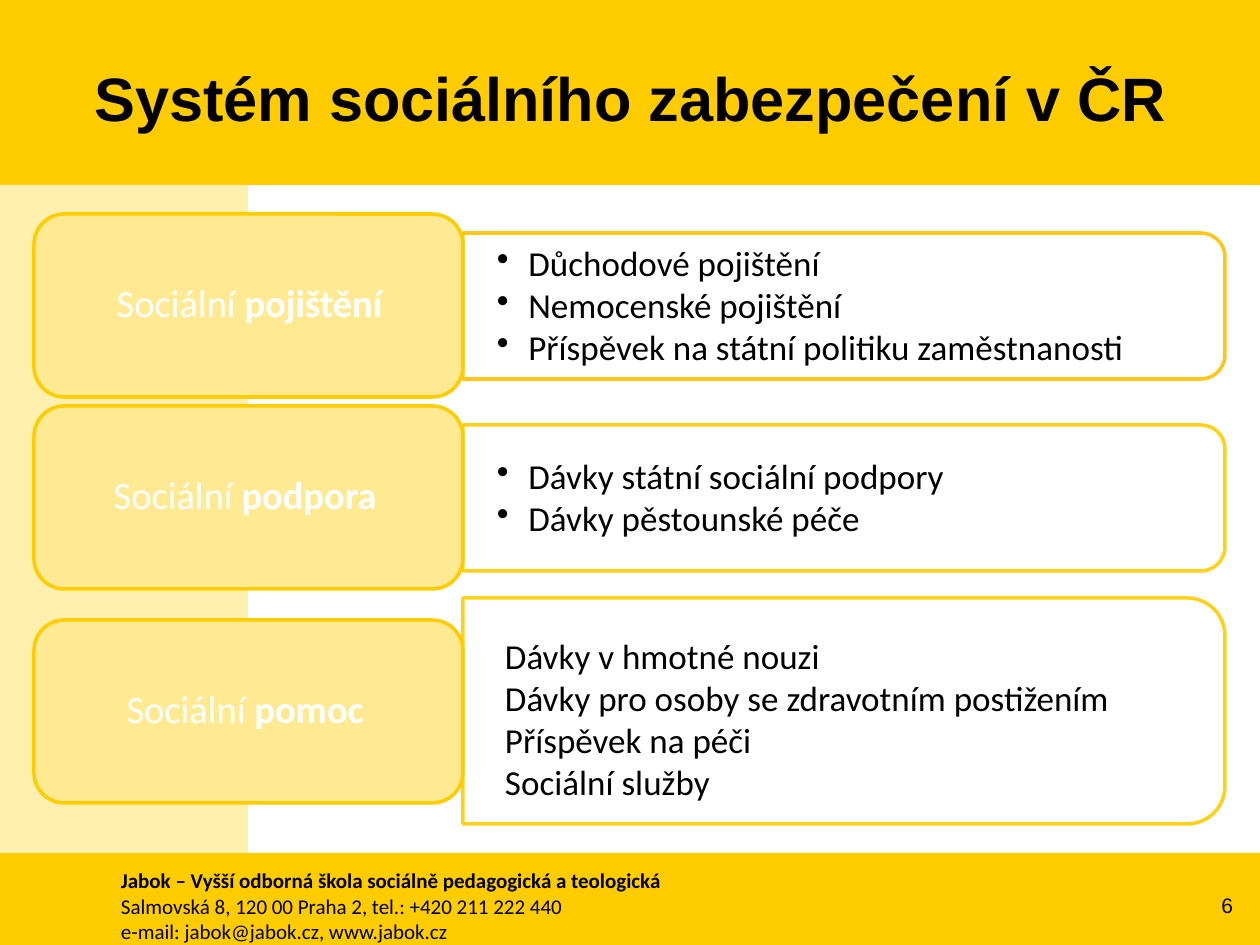
from lxml import etree
from pptx import Presentation
from pptx import util as u
from pptx.dml.color import RGBColor
from pptx.enum import shapes, text
from pptx.oxml.ns import qn

SCALE = 914400 / 126  # EMU per px
GOLD = RGBColor(0xFF, 0xCC, 0x00)
AMBER = RGBColor(0xFF, 0xC0, 0x00)
CREAM = RGBColor(0xFF, 0xF0, 0xAF)
LEMON = RGBColor(0xFF, 0xEA, 0x93)
WHITE = RGBColor(0xFF, 0xFF, 0xFF)
BLACK = RGBColor(0x00, 0x00, 0x00)
KIND = shapes.MSO_SHAPE
ALIGN = text.PP_ALIGN

deck = Presentation()
deck.slide_width, deck.slide_height = u.Inches(10), u.Inches(7.5)
page = deck.slides.add_slide(deck.slide_layouts[6])


def add_block(kind, place, fill, line=None):
    block = page.shapes.add_shape(kind, *(round(v * SCALE) for v in place))
    block.shadow.inherit = False
    block.fill.solid()
    block.fill.fore_color.rgb = fill
    if line is None:
        block.line.fill.background()
    else:
        block.line.color.rgb = line
        block.line.width = u.Pt(2)
    return block


def add_text(place, lines, size, name="Calibri", color=BLACK, insets=(13, 6, 13, 6),
             anchor=text.MSO_ANCHOR.MIDDLE, bullet=False, **paragraph):
    """Each line is a list of (wording, bold) spans."""
    box = page.shapes.add_textbox(*(round(v * SCALE) for v in place))
    frame = box.text_frame
    frame.word_wrap = True
    frame.vertical_anchor = anchor
    for side, inset in zip(("left", "top", "right", "bottom"), insets):
        setattr(frame, "margin_" + side, round(inset * SCALE))
    for number, line in enumerate(lines):
        para = frame.add_paragraph() if number else frame.paragraphs[0]
        for key, value in paragraph.items():
            setattr(para, key, value)
        if bullet:
            props = para._p.get_or_add_pPr()
            props.set("marL", str(u.Inches(0.25)))
            props.set("indent", str(-u.Inches(0.25)))
            etree.SubElement(props, qn("a:buChar")).set("char", "•")
        for wording, bold in line:
            span = para.add_run()
            span.text = wording
            form = {"size": u.Pt(size), "name": name, "bold": bold}
            for key, value in form.items():
                setattr(span.font, key, value)
            span.font.color.rgb = color


# Background bands
add_block(KIND.RECTANGLE, (0, 0, 1260, 185), GOLD)
add_block(KIND.RECTANGLE, (0, 185, 248, 760), CREAM)
add_block(KIND.RECTANGLE, (0, 853, 1260, 96), GOLD)

# Footer and page number
add_text((108, 862, 1032, 89),
         [[("Jabok – Vyšší odborná škola sociálně pedagogická a teologická", True)],
          [("Salmovská 8, 120 00 Praha 2, tel.: +420 211 222 440", False)],
          [("e-mail: jabok@jabok.cz, www.jabok.cz", False)]],
         12, anchor=text.MSO_ANCHOR.TOP)
add_text((1167, 880, 79, 50), [[("6", False)]], 12, "Arial", alignment=ALIGN.RIGHT)

# Title
add_text((64, 18, 1134, 158), [[("Systém sociálního zabezpečení v ČR", True)]],
         35, "Arial", alignment=ALIGN.CENTER)

# Rows: label top, bold word, panel top and height, outline, bulleted, items
rows = [
    (214, "pojištění", 233, 146, AMBER, True,
     ["Důchodové pojištění", "Nemocenské pojištění",
      "Příspěvek na státní politiku zaměstnanosti"]),
    (406, "podpora ", 425, 146, GOLD, True,
     ["Dávky státní sociální podpory", "Dávky pěstounské péče"]),
    (620, "pomoc ", 598, 226, GOLD, False,
     ["Dávky v hmotné nouzi", "Dávky pro osoby se zdravotním postižením",
      "Příspěvek na péči", "Sociální služby"]),
]
PANEL_LEFT, PANEL_WIDTH = 463, 762
for label_top, word, top, height, outline, bulleted, items in rows:
    # Panel: a top-rounded rectangle turned a quarter to round its right side
    middle_x, middle_y = PANEL_LEFT + PANEL_WIDTH / 2, top + height / 2
    panel = add_block(KIND.ROUND_2_SAME_RECTANGLE,
                      (middle_x - height / 2, middle_y - PANEL_WIDTH / 2,
                       height, PANEL_WIDTH), WHITE, outline)
    panel.rotation = 90
    for color in panel._element.spPr.iter(qn("a:srgbClr")):
        etree.SubElement(color, qn("a:alpha")).set("val", "90000")

    lines = [[(item, False)] for item in items]
    if bulleted:
        add_text((PANEL_LEFT, top + 8, 755, 132), lines, 20, insets=(34, 18, 34, 18),
                 bullet=True, alignment=ALIGN.JUSTIFY, line_spacing=0.9,
                 space_after=u.Pt(2.5))
    else:
        add_text((PANEL_LEFT, top + 18, 751, 204), lines, 20, insets=(42, 18, 34, 18))

    # Label
    add_block(KIND.ROUNDED_RECTANGLE, (34, label_top, 429, 183), LEMON, GOLD)
    add_text((44, label_top + 9, 411, 165), [[("Sociální ", False), (word, True)]],
             22, color=WHITE, insets=(11, 6, 11, 6), alignment=ALIGN.CENTER,
             line_spacing=0.9)

deck.save("out.pptx")
